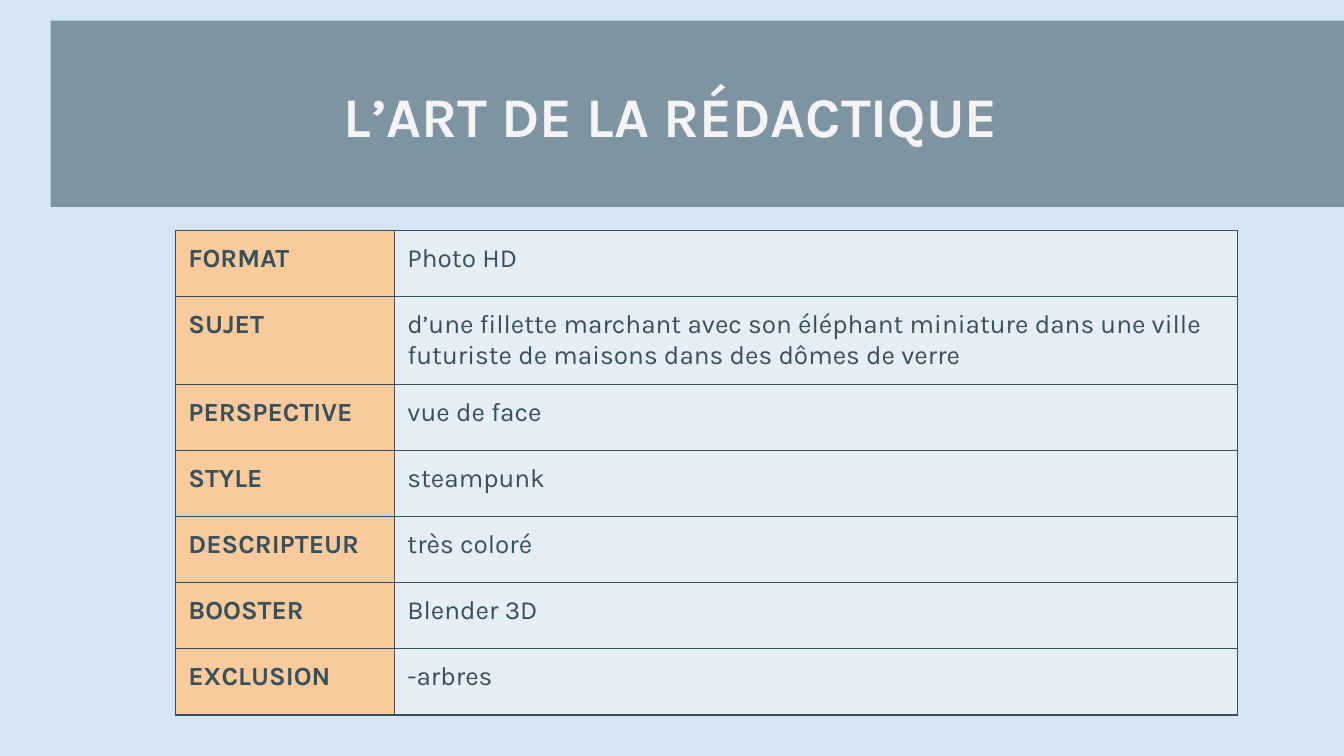
from lxml import etree
from pptx import Presentation
from pptx.dml.color import RGBColor
from pptx.enum.shapes import MSO_SHAPE
from pptx.enum.text import MSO_ANCHOR, PP_ALIGN
from pptx.oxml.ns import qn
from pptx.util import Cm, Pt

RECTANGLE = MSO_SHAPE.RECTANGLE
TOP = MSO_ANCHOR.TOP
LEFT, CENTER = PP_ALIGN.LEFT, PP_ALIGN.CENTER

SKY = RGBColor(0xD4, 0xE6, 0xF4)
SLATE = RGBColor(0x38, 0x4F, 0x5C)
PALE = RGBColor(0xF4, 0xF4, 0xF6)
PEACH = RGBColor(0xF9, 0xCB, 0x9C)

FONT = "Karla"
INSET = Cm(0.25)
TITLE_ONLY = 5
PLAIN_GRID_STYLE = "{2D5ABB26-0587-4C30-8999-92F81FD0307C}"
COLUMN_WIDTHS = (Cm(4.14), Cm(15.93))
ROW_HEIGHT = Cm(1.25)
PROMPT_PARTS = [
    ("FORMAT", "Photo HD"),
    ("SUJET", "d’une fillette marchant avec son éléphant miniature dans une "
              "ville futuriste de maisons dans des dômes de verre"),
    ("PERSPECTIVE", "vue de face"),
    ("STYLE", "steampunk"),
    ("DESCRIPTEUR", "très coloré"),
    ("BOOSTER", "Blender 3D"),
    ("EXCLUSION", "-arbres"),
]


def write_text(frame, text, size=14, color=SLATE, bold=False, align=LEFT):
    paragraph = frame.paragraphs[0]
    paragraph.alignment = align
    run = paragraph.add_run()
    run.text = text
    run.font.name = FONT
    run.font.size = Pt(size)
    run.font.bold = bold
    run.font.color.rgb = color


def set_insets(container):
    container.margin_left = container.margin_right = INSET
    container.margin_top = container.margin_bottom = INSET


def paint(fill, color, opacity, properties):
    fill.solid()
    fill.fore_color.rgb = color
    if opacity < 100:
        color_element = properties.find(qn("a:solidFill"))[0]
        etree.SubElement(color_element, qn("a:alpha"), val=str(opacity * 1000))


def add_band(slide):
    band = slide.shapes.add_shape(RECTANGLE, Cm(0.96), Cm(0.39), Cm(25.4), Cm(3.52))
    band.shadow.inherit = False
    band.line.fill.background()
    paint(band.fill, SLATE, 54, band._element.spPr)
    slide.shapes._spTree.insert(2, band._element)


def set_title(slide, text):
    title = slide.shapes.title
    title.left, title.top = Cm(3.86), Cm(1.3)
    title.width, title.height = Cm(17.65), Cm(1.6)
    frame = title.text_frame
    frame.word_wrap = True
    frame.vertical_anchor = TOP
    set_insets(frame)
    write_text(frame, text, size=30, color=PALE, bold=True, align=CENTER)


def add_borders(cell):
    properties = cell._tc.get_or_add_tcPr()
    for position, side in enumerate(("lnL", "lnR", "lnT", "lnB")):
        border = etree.Element(qn(f"a:{side}"), w=str(Pt(0.75)))
        fill = etree.SubElement(border, qn("a:solidFill"))
        etree.SubElement(fill, qn("a:srgbClr"), val=str(SLATE))
        properties.insert(position, border)


def format_cell(cell, text, color, opacity=100, bold=False):
    set_insets(cell)
    cell.vertical_anchor = TOP
    write_text(cell.text_frame, text, bold=bold)
    paint(cell.fill, color, opacity, cell._tc.get_or_add_tcPr())
    add_borders(cell)


def add_prompt_table(slide, parts):
    frame = slide.shapes.add_table(len(parts), 2, Cm(3.31), Cm(4.36),
                                   sum(COLUMN_WIDTHS), ROW_HEIGHT * len(parts))
    table = frame.table
    table.first_row = table.horz_banding = False
    table._tbl.tblPr.find(qn("a:tableStyleId")).text = PLAIN_GRID_STYLE
    for column, width in zip(table.columns, COLUMN_WIDTHS):
        column.width = width
    for row, (label, value) in zip(table.rows, parts):
        row.height = ROW_HEIGHT
        format_cell(row.cells[0], label, PEACH, bold=True)
        format_cell(row.cells[1], value, PALE, opacity=55)
    table.rows[1].height = Cm(1.65)


def main():
    deck = Presentation()
    deck.slide_width, deck.slide_height = Cm(25.4), Cm(14.29)
    slide = deck.slides.add_slide(deck.slide_layouts[TITLE_ONLY])
    slide.background.fill.solid()
    slide.background.fill.fore_color.rgb = SKY
    add_band(slide)
    set_title(slide, "L’ART DE LA RÉDACTIQUE")
    add_prompt_table(slide, PROMPT_PARTS)
    deck.save("out.pptx")


if __name__ == "__main__":
    main()
